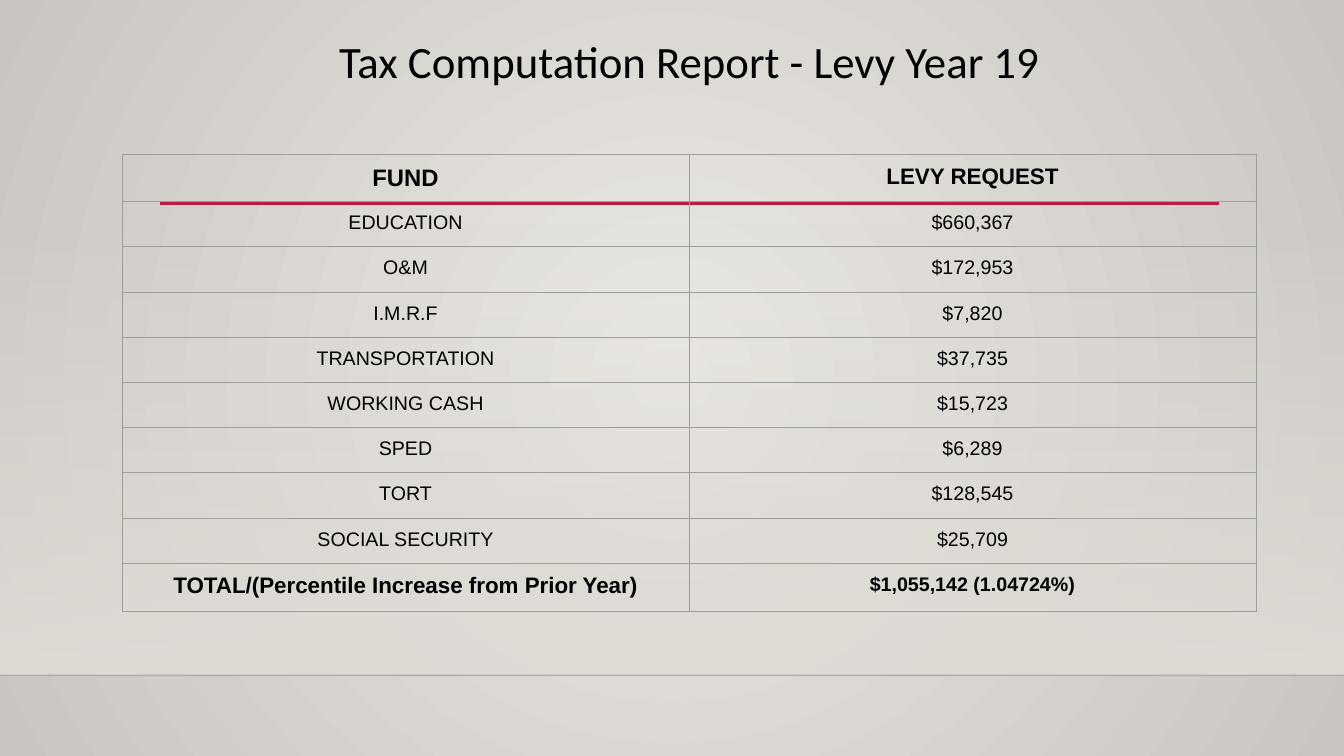
from lxml.etree import SubElement as Sub
from pptx import Presentation
from pptx.dml.color import RGBColor as Rgb
from pptx.enum.shapes import MSO_CONNECTOR as Conn, MSO_SHAPE as Shape
from pptx.enum.text import MSO_ANCHOR as Anchor, MSO_AUTO_SIZE as Auto, PP_ALIGN as Align
from pptx.oxml.ns import qn
from pptx.util import Pt

HUES = {"ink": "000000", "red": "B71E42", "grid": "9E9E9E", "edge": "000001",
        "floor": "DFDBD5", "light": "EBE9E6", "dark": "C9C5C0"}

FUNDS = [("EDUCATION", "$660,367"), ("O&M", "$172,953"), ("I.M.R.F", "$7,820"),
         ("TRANSPORTATION", "$37,735"), ("WORKING CASH", "$15,723"),
         ("SPED", "$6,289"), ("TORT", "$128,545"), ("SOCIAL SECURITY", "$25,709")]
HEAD = ("FUND", "LEVY REQUEST")
TOTAL = ("TOTAL/(Percentile Increase from Prior Year)", "$1,055,142 (1.04724%)")


def write(frame, text, size=14, bold=False, font="Arial", hue="ink", space=1.0):
    """Put one centred, formatted paragraph into a text frame."""
    para = frame.paragraphs[0]
    para.alignment = Align.CENTER
    para.line_spacing = space
    run = para.add_run()
    run.text = text
    run.font.size, run.font.bold, run.font.name = Pt(size), bold, font
    run.font.color.rgb = Rgb.from_string(HUES[hue])


def blend(fill, first, last):
    """Set a two-stop gradient fill."""
    fill.gradient()
    for stop, hue, place in zip(fill.gradient_stops, (first, last), (0, 1)):
        stop.color.rgb = Rgb.from_string(HUES[hue])
        stop.position = place


def fade(node, share):
    """Give the first colour below a node an opacity in percent."""
    tint = next(node.iter(qn("a:srgbClr")))
    Sub(tint, qn("a:alpha"), val=str(share * 1000))


class Deck:
    """Hold the style and the current slide."""

    def __init__(self):
        """Open a wide deck with one title-only slide."""
        self.deck = Presentation()
        self.deck.slide_width, self.deck.slide_height = Pt(960), Pt(540)
        self.slide = self.deck.slides.add_slide(self.deck.slide_layouts[5])
        self.shapes = self.slide.shapes

    def glow(self):
        """Fill the background from the centre outwards."""
        blend(self.slide.background.fill, "light", "dark")
        grad = next(self.slide.element.iter(qn("a:gradFill")))
        grad.remove(grad.find(qn("a:lin")))
        ring = Sub(grad, qn("a:path"), {"path": "circle"})
        Sub(ring, qn("a:fillToRect"), {side: "50000" for side in "ltrb"})

    def wall(self, left, top, wide, high):
        """Add a panel that fades in downwards."""
        box = self.shapes.add_shape(Shape.RECTANGLE, Pt(left), Pt(top), Pt(wide), Pt(high))
        box.shadow.inherit = False
        blend(box.fill, "floor", "floor")
        box.fill.gradient_angle = 270
        fade(next(box.element.iter(qn("a:gs"))), 0)
        box.line.fill.background()

    def rule(self, left, right, top, hue, width, share=100):
        """Add a level line."""
        line = self.shapes.add_connector(Conn.STRAIGHT, Pt(left), Pt(top), Pt(right), Pt(top))
        line.line.color.rgb = Rgb.from_string(HUES[hue])
        line.line.width = Pt(width)
        props = line.element.spPr
        fade(props, share)
        Sub(props, qn("a:effectLst"))

    def title(self, text, left, top, wide, high):
        """Place and format the title."""
        box = self.shapes.title
        box.left, box.top, box.width, box.height = Pt(left), Pt(top), Pt(wide), Pt(high)
        frame = box.text_frame
        frame.auto_size, frame.vertical_anchor = Auto.NONE, Anchor.TOP
        write(frame, text, size=32, font="Calibri", space=0.9)

    def cell(self, cell, text, size, bold):
        """Write one cell with its border and margins."""
        cell.margin_left = cell.margin_right = Pt(7.2)
        cell.margin_top = cell.margin_bottom = Pt(7.2)
        cell.vertical_anchor = Anchor.TOP
        props = cell._tc.get_or_add_tcPr()
        for side in "LRTB":
            line = Sub(props, qn(f"a:ln{side}"), w=str(Pt(0.75)))
            Sub(Sub(line, qn("a:solidFill")), qn("a:srgbClr"), val=HUES["grid"])
        cell.fill.background()
        write(cell.text_frame, text, size=size, bold=bold)

    def table(self, rows, sizes, highs, left, top, wide):
        """Add a table with a bold first and last row."""
        grid = self.shapes.add_table(len(rows), len(rows[0]), Pt(left), Pt(top),
                                     Pt(wide), Pt(sum(highs))).table
        grid.first_row = grid.horz_banding = False
        for i, row in enumerate(rows):
            grid.rows[i].height = Pt(highs[i])
            for j, text in enumerate(row):
                self.cell(grid.cell(i, j), text, sizes[i][j], i in (0, len(rows) - 1))


def main():
    """Build and save the slide."""
    deck = Deck()
    deck.glow()
    deck.wall(0, 159, 960, 323.4)
    deck.rule(0, 960, 482.4, "edge", 1, share=20)
    deck.rule(114.5, 871, 145.4, "red", 2.5)
    deck.title("Tax Computation Report - Levy Year 19", 114.5, 24.5, 756, 57.6)
    count = len(FUNDS)
    deck.table([HEAD, *FUNDS, TOTAL], [(17, 16)] + [(14, 14)] * count + [(16, 14)],
               [33.9] + [32.3] * count + [34.3], 87.2, 110.2, 810)
    deck.deck.save("out.pptx")


if __name__ == "__main__":
    main()
